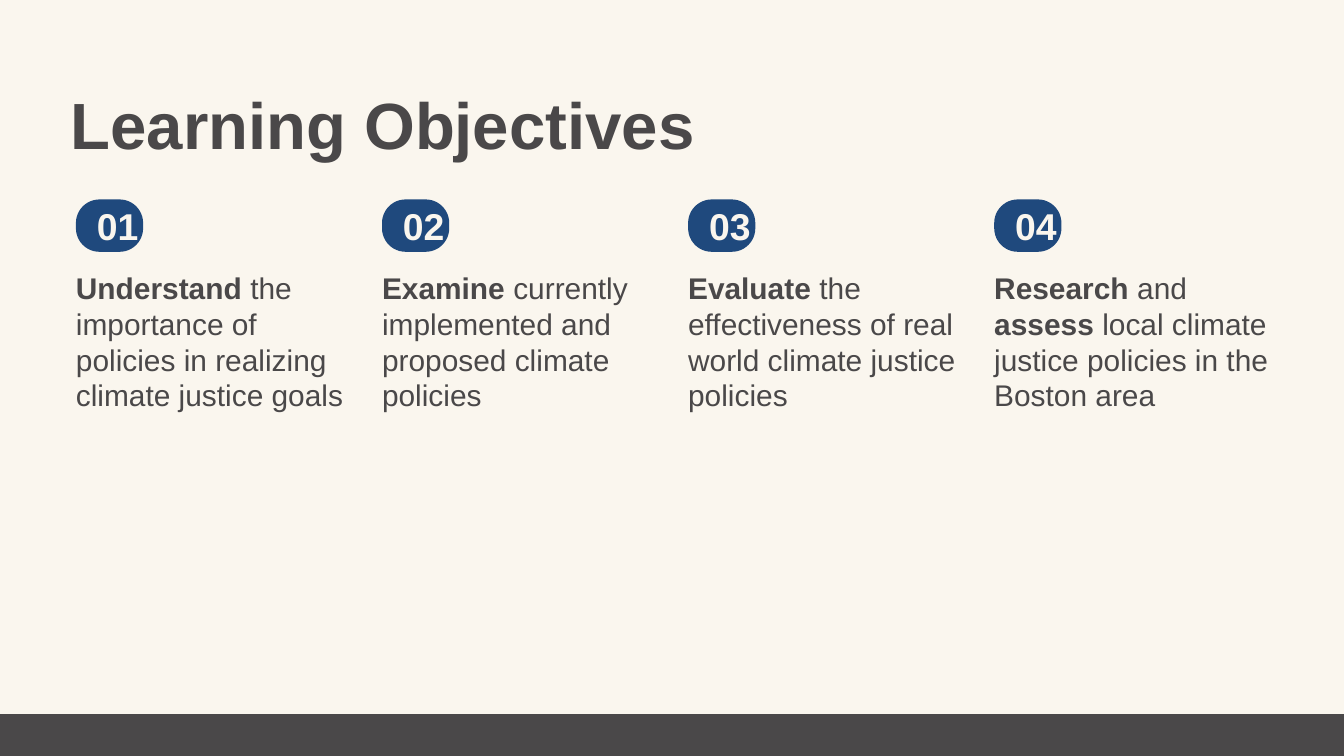
from pptx import Presentation
from pptx.dml.color import RGBColor
from pptx.enum.shapes import MSO_SHAPE
from pptx.enum.text import MSO_ANCHOR, PP_ALIGN
from pptx.util import Cm, Pt

ROUNDED = MSO_SHAPE.ROUNDED_RECTANGLE
RECTANGLE = MSO_SHAPE.RECTANGLE
TOP, MIDDLE = MSO_ANCHOR.TOP, MSO_ANCHOR.MIDDLE
LEFT = PP_ALIGN.LEFT

CREAM, CHARCOAL, NAVY = "FAF6EE", "4A4849", "1F497D"
FIRST_COLUMN, COLUMN_STEP = 2.87, 11.57
OBJECTIVES = [
    [("Understand", True),
     (" the importance of policies in realizing climate justice goals", False)],
    [("Examine", True),
     (" currently implemented and proposed climate policies", False)],
    [("Evaluate", True),
     (" the effectiveness of real world climate justice policies", False)],
    [("Research", True), (" and ", False), ("assess", True),
     (" local climate justice policies in the Boston area", False)],
]


def color(hex_string):
    return RGBColor.from_string(hex_string)


def write(box, spans, size, ink=CHARCOAL, anchor=TOP, inset=0, wrap=True):
    frame = box.text_frame
    frame.word_wrap = wrap
    frame.vertical_anchor = anchor
    frame.margin_left = Cm(inset)
    frame.margin_right = frame.margin_top = frame.margin_bottom = 0
    para = frame.paragraphs[0]
    para.alignment = LEFT
    para.line_spacing = Pt(size * 1.2)
    for text, bold in spans:
        span = para.add_run()
        span.text = text
        span.font.name = "Arial"
        span.font.size = Pt(size)
        span.font.bold = bold
        span.font.color.rgb = color(ink)


def add_block(page, kind, left, top, width, height, fill):
    block = page.shapes.add_shape(kind, Cm(left), Cm(top), Cm(width), Cm(height))
    block.shadow.inherit = False
    block.fill.solid()
    block.fill.fore_color.rgb = color(fill)
    block.line.fill.background()
    return block


def add_title(page, text):
    title = page.shapes.title
    title.left, title.top = Cm(2.67), Cm(3.2)
    title.width, title.height = Cm(45.26), Cm(3)
    write(title, [(text, True)], 70)


def add_objective(page, number, left, spans):
    badge = add_block(page, ROUNDED, left, 7.54, 2.54, 1.98, NAVY)
    badge.adjustments[0] = 0.45
    write(badge, [(f"{number:02}", True)], 40, ink=CREAM, anchor=MIDDLE,
          inset=0.53, wrap=False)
    box = page.shapes.add_textbox(Cm(left), Cm(10.19), Cm(10.49), Cm(5.46))
    write(box, spans, 32)


def main():
    deck = Presentation()
    deck.slide_width, deck.slide_height = Cm(50.8), Cm(28.58)
    page = deck.slides.add_slide(deck.slide_layouts[5])
    page.background.fill.solid()
    page.background.fill.fore_color.rgb = color(CREAM)
    add_title(page, "Learning Objectives")
    add_block(page, RECTANGLE, 0, 27, 50.8, 1.58, CHARCOAL)
    for index, spans in enumerate(OBJECTIVES):
        add_objective(page, index + 1, FIRST_COLUMN + index * COLUMN_STEP, spans)
    deck.save("out.pptx")


if __name__ == "__main__":
    main()
